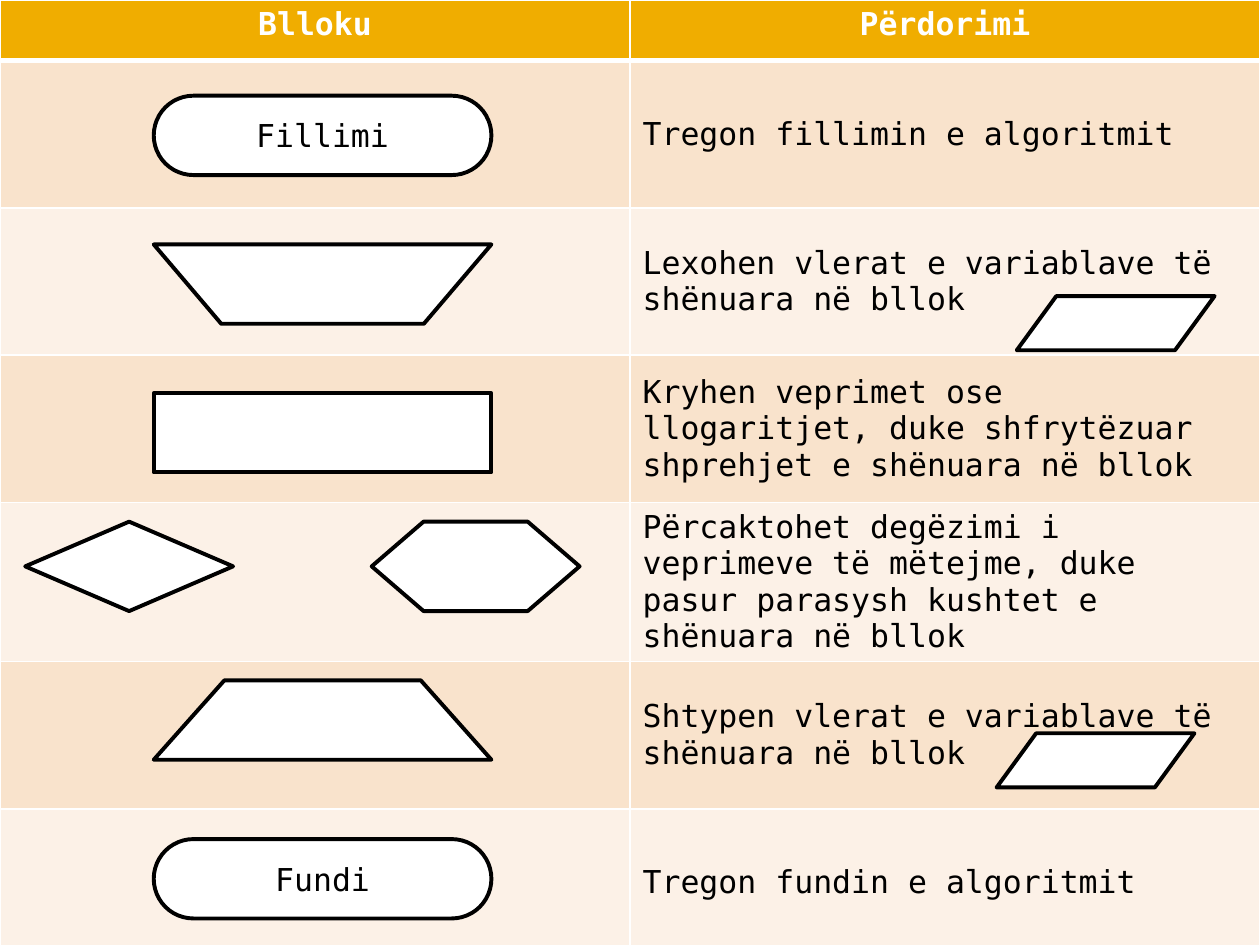
from lxml import etree
from pptx import Presentation
from pptx.dml.color import RGBColor
from pptx.enum.shapes import MSO_SHAPE
from pptx.enum.text import MSO_ANCHOR, PP_ALIGN
from pptx.oxml.ns import qn
from pptx.util import Inches, Pt

PILL = MSO_SHAPE.ROUNDED_RECTANGLE
INPUT = MSO_SHAPE.FLOWCHART_MANUAL_OPERATION
OUTPUT = MSO_SHAPE.TRAPEZOID
STEP = MSO_SHAPE.RECTANGLE
CHOICE = MSO_SHAPE.DIAMOND
HEX = MSO_SHAPE.HEXAGON
DATA = MSO_SHAPE.FLOWCHART_DATA
CENTER, LEFT = PP_ALIGN.CENTER, PP_ALIGN.LEFT
TOP, MIDDLE = MSO_ANCHOR.TOP, MSO_ANCHOR.MIDDLE

WHITE = RGBColor(0xFF, 0xFF, 0xFF)
BLACK = RGBColor(0, 0, 0)
GOLD = RGBColor(0xF0, 0xAD, 0x00)
PEACH = RGBColor(0xF9, 0xE3, 0xCC)
CREAM = RGBColor(0xFC, 0xF1, 0xE7)

FONT = "DejaVu Sans Mono"
HEADS = ["Blloku", "Përdorimi"]
USES = [
    "Tregon fillimin e algoritmit",
    "Lexohen vlerat e variablave të shënuara në bllok",
    "Kryhen veprimet ose llogaritjet, duke shfrytëzuar shprehjet "
    "e shënuara në bllok",
    "Përcaktohet degëzimi i veprimeve të mëtejme, duke pasur parasysh "
    "kushtet e shënuara në bllok",
    "Shtypen vlerat e variablave të shënuara në bllok",
    "Tregon fundin e algoritmit",
]
HEAD_H, ROW_H = 0.48, 1.17

# Block sizes, then kind, left, top, size, adjustment, label
WIDE, MID, SMALL = (2.68, 0.63), (1.65, 0.71), (1.57, 0.43)
BLOCKS = [
    (PILL, 1.22, 0.76, WIDE, 0.5, "Fillimi"),
    (PILL, 1.22, 6.66, WIDE, 0.5, "Fundi"),
    (INPUT, 1.22, 1.94, WIDE, None, ""),
    (OUTPUT, 1.22, 5.4, WIDE, 0.89, ""),
    (STEP, 1.22, 3.12, WIDE, None, ""),
    (CHOICE, 0.2, 4.14, MID, None, ""),
    (HEX, 2.95, 4.14, MID, 0.58, ""),
    (DATA, 8.07, 2.35, SMALL, None, ""),
    (DATA, 7.91, 5.82, SMALL, None, ""),
]


def write(frame, text, color, align, bold=False):
    para = frame.paragraphs[0]
    para.alignment = align
    run = para.add_run()
    run.text = text
    font = run.font
    font.name, font.size, font.bold = FONT, Pt(18), bold
    font.color.rgb = color


def edge(cell, side, width):
    props = cell._tc.get_or_add_tcPr()
    line = etree.SubElement(props, qn("a:ln" + side), w=str(Pt(width)))
    fill = etree.SubElement(line, qn("a:solidFill"))
    etree.SubElement(fill, qn("a:srgbClr"), val=str(WHITE))


def style(cell, color, anchor, base=1):
    for side, width in zip("LRTB", (1, 1, 1, base)):
        edge(cell, side, width)
    cell.fill.solid()
    cell.fill.fore_color.rgb = color
    cell.vertical_anchor = anchor


def add_grid(slide):
    count = len(USES) + 1
    frame = slide.shapes.add_table(count, 2, 0, 0, Inches(10), Inches(7.5))
    table = frame.table
    for col in table.columns:
        col.width = Inches(5)
    for row in table.rows:
        row.height = Inches(ROW_H)
    table.rows[0].height = Inches(HEAD_H)

    # Header row
    for col, head in enumerate(HEADS):
        cell = table.cell(0, col)
        style(cell, GOLD, TOP, 3)
        write(cell.text_frame, head, WHITE, CENTER, True)

    # Banded body rows
    for row, use in enumerate(USES, 1):
        color = PEACH if row % 2 else CREAM
        style(table.cell(row, 0), color, TOP)
        cell = table.cell(row, 1)
        style(cell, color, MIDDLE)
        write(cell.text_frame, use, BLACK, LEFT)


def add_block(slide, kind, left, top, size, adjust, label):
    shape = slide.shapes.add_shape(
        kind, Inches(left), Inches(top), Inches(size[0]), Inches(size[1]))
    shape.shadow.inherit = False
    if adjust is not None:
        shape.adjustments[0] = adjust
    shape.fill.solid()
    shape.fill.fore_color.rgb = WHITE
    shape.line.color.rgb = BLACK
    shape.line.width = Pt(2.25)
    if label:
        shape.text_frame.vertical_anchor = MIDDLE
        write(shape.text_frame, label, BLACK, CENTER)


def main():
    deck = Presentation()
    deck.slide_width, deck.slide_height = Inches(10), Inches(7.5)
    slide = deck.slides.add_slide(deck.slide_layouts[6])
    add_grid(slide)
    for block in BLOCKS:
        add_block(slide, *block)
    deck.save("out.pptx")


if __name__ == "__main__":
    main()
